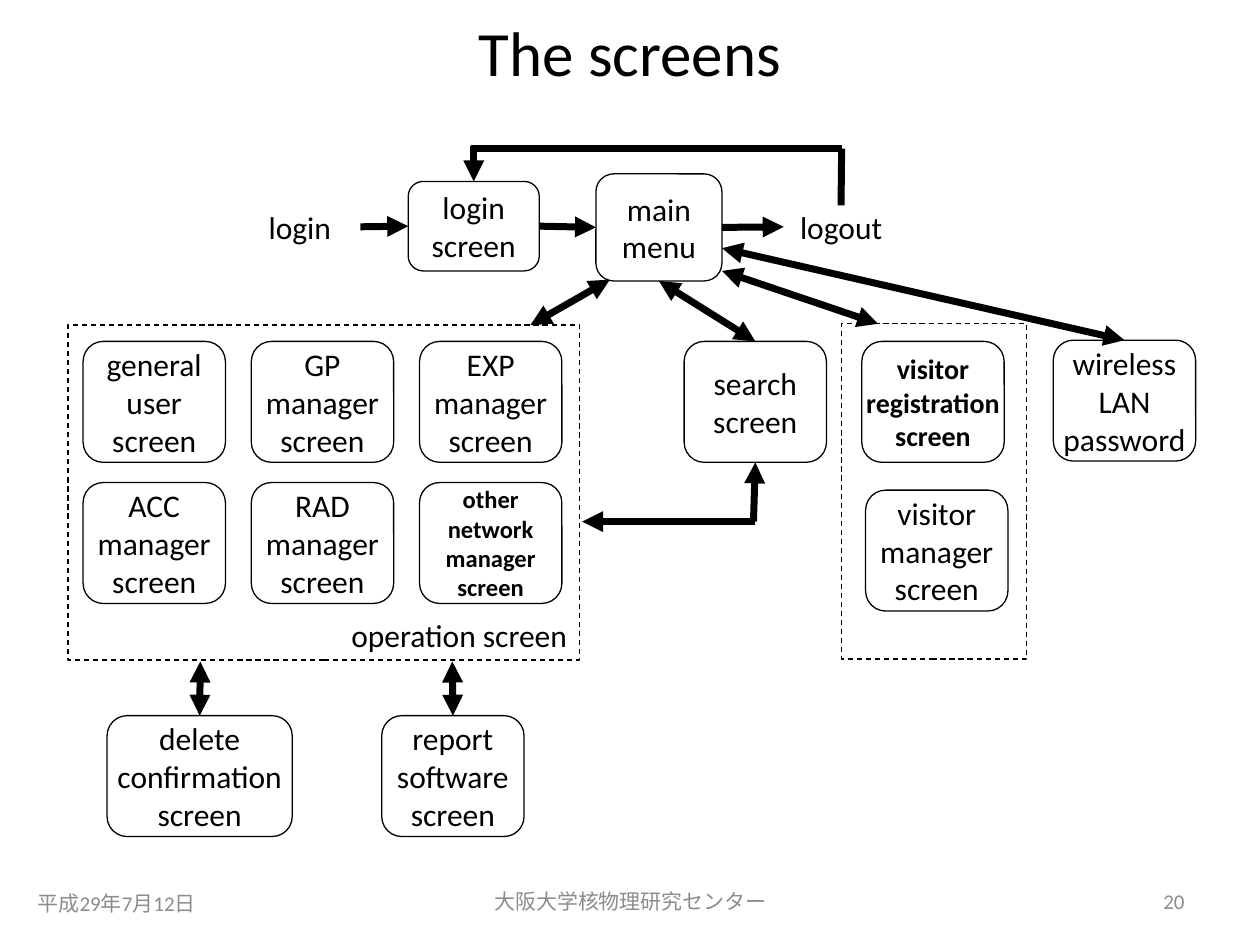
from lxml.etree import SubElement
from pptx import Presentation
from pptx.dml.color import RGBColor
from pptx.enum.dml import MSO_LINE
from pptx.enum.shapes import MSO_CONNECTOR, MSO_SHAPE
from pptx.enum.text import MSO_ANCHOR, MSO_AUTO_SIZE, PP_ALIGN
from pptx.oxml.ns import qn
from pptx.util import Inches, Pt

BLACK = RGBColor(0x00, 0x00, 0x00)
WHITE = RGBColor(0xFF, 0xFF, 0xFF)
GRAY = RGBColor(0x8C, 0x8C, 0x8C)
FONT = "Calibri"
COLUMNS = 100
UNIT = Inches(10) // COLUMNS
TOP, LEFT, BOTTOM, RIGHT = range(4)
SCREEN_WIDTH, SCREEN_HEIGHT = 11.3, 9.6
FIRST_ROW, SECOND_ROW = 27.1, 38.3
BOTTOM_ROW = 56.8
MANAGER_LEFT, MANAGER_STEP = 6.6, 13.35


def grid(*cells):
    """Turn grid columns and rows into slide lengths."""
    return [round(cell * UNIT) for cell in cells]


def write(shape, text, size=18, color=BLACK, bold=False,
          align=PP_ALIGN.CENTER, anchor=MSO_ANCHOR.MIDDLE, wrap=False):
    """Fill a shape with evenly formatted paragraphs."""
    frame = shape.text_frame
    frame.text = text
    frame.word_wrap = wrap
    frame.auto_size = MSO_AUTO_SIZE.NONE
    frame.vertical_anchor = anchor
    for para in frame.paragraphs:
        para.alignment = align
        para.font.name = FONT
        para.font.size = Pt(size)
        para.font.bold = bold
        para.font.color.rgb = color


def add_label(page, text, left, top, width, height, **style):
    """Add plain text without an outline."""
    label = page.shapes.add_textbox(*grid(left, top, width, height))
    write(label, text, **style)
    return label


def add_outline(page, kind, left, top, width, height):
    """Add an unfilled shape with a thin black line."""
    outline = page.shapes.add_shape(kind, *grid(left, top, width, height))
    outline.shadow.inherit = False
    outline.fill.background()
    outline.line.color.rgb = BLACK
    outline.line.width = Pt(0.75)
    return outline


def add_screen(page, text, left, top, width=SCREEN_WIDTH, height=SCREEN_HEIGHT, **style):
    """Add a rounded box that stands for one screen."""
    screen = add_outline(page, MSO_SHAPE.ROUNDED_RECTANGLE, left, top, width, height)
    write(screen, text, **style)
    return screen


def add_group(page, text, left, top, width, height):
    """Add a dashed frame with its caption at the lower right."""
    group = add_outline(page, MSO_SHAPE.RECTANGLE, left, top, width, height)
    group.line.dash_style = MSO_LINE.DASH
    if text:
        write(group, text, align=PP_ALIGN.RIGHT, anchor=MSO_ANCHOR.BOTTOM)


def add_arrow(page, start, end, heads=("tailEnd",)):
    """Draw a thick line between points or (shape, side) pairs."""
    ends = [grid(0, 0) if hasattr(spot[0], "shape_id") else grid(*spot)
            for spot in (start, end)]
    arrow = page.shapes.add_connector(MSO_CONNECTOR.STRAIGHT, *ends[0], *ends[1])
    for spot, join in ((start, arrow.begin_connect), (end, arrow.end_connect)):
        if hasattr(spot[0], "shape_id"):
            join(*spot)
    arrow.line.color.rgb = BLACK
    arrow.line.width = Pt(4)
    line = arrow.line._get_or_add_ln()
    for head in heads:
        SubElement(line, qn(f"a:{head}"), type="triangle")
    SubElement(arrow._element.spPr, qn("a:effectLst"))


def add_title(page, text):
    """Place and format the title placeholder."""
    title = page.shapes.title
    title.left, title.top, title.width, title.height = grid(7.5, 0.6, 85, 7)
    write(title, text, size=36, wrap=True)


def add_footer(page):
    """Add the date, the institute and the page number."""
    entries = (
        ("平成29年7月12日", 2, 69.7, 23.3, PP_ALIGN.LEFT),
        ("大阪大学核物理研究センター", 34.2, 69.5, 31.7, PP_ALIGN.CENTER),
        ("20", 71.7, 69.5, 23.3, PP_ALIGN.RIGHT),
    )
    for text, left, top, width, align in entries:
        add_label(page, text, left, top, width, 4,
                  size=12, color=GRAY, align=align, wrap=True)


def add_manager_screens(page):
    """Lay out the operation screens in two rows of three."""
    names = (("general\nuser", "GP\nmanager", "EXP\nmanager"),
             ("ACC\nmanager", "RAD\nmanager", "other\nnetwork\nmanager"))
    for top, row in zip((FIRST_ROW, SECOND_ROW), names):
        for column, name in enumerate(row):
            style = {"size": 14, "bold": True} if "other" in name else {}
            add_screen(page, f"{name}\nscreen",
                       MANAGER_LEFT + column * MANAGER_STEP, top, **style)
    add_group(page, "operation screen", 5.4, 25.8, 40.6, 26.6)


def add_visitor_screens(page):
    """Add the visitor screens and their frame."""
    add_screen(page, "visitor\nregistration\nscreen", 68.4, FIRST_ROW, size=16, bold=True)
    add_screen(page, "visitor\nmanager\nscreen", 68.7, 38.9)
    add_group(page, "", 66.8, 25.7, 14.7, 26.6)


def add_flow(page):
    """Add the single screens and the arrows between all parts."""
    login = add_label(page, "login", 19, 16.3, 9.6, 3.4)
    logout = add_label(page, "logout", 62.2, 16.3, 9.1, 3.4)
    entry = add_screen(page, "login\nscreen", 32.4, 14.4, 10.4, 7.1)
    menu = add_screen(page, "main\nmenu", 47.3, 13.8, 10, 8.5)
    for box in (entry, menu):
        box.fill.solid()
        box.fill.fore_color.rgb = WHITE
    search = add_screen(page, "search\nscreen", 54.3, FIRST_ROW)
    wireless = add_screen(page, "wireless\nLAN\npassword", 83.6, 27)
    delete = add_screen(page, "delete\nconfirmation\nscreen", 8.5, BOTTOM_ROW, 14.7)
    report = add_screen(page, "report\nsoftware\nscreen", 30.3, BOTTOM_ROW)

    for start, end in ((login, entry), (entry, menu), (menu, logout)):
        add_arrow(page, (start, RIGHT), (end, LEFT))

    two_way = (
        ((48.4, 22.2), (42.1, 25.8)),
        ((menu, BOTTOM), (search, TOP)),
        ((57.3, 21.5), (69.7, 25.7)),
        ((57.3, 19.7), (wireless, TOP)),
        ((15.9, 52.5), (delete, TOP)),
        ((35.9, 52.5), (report, TOP)),
    )
    for start, end in two_way:
        add_arrow(page, start, end, ("headEnd", "tailEnd"))

    add_arrow(page, (66.8, 11.8), (logout, TOP), ())
    add_arrow(page, (66.8, 11.8), (37.4, 11.8), ())
    add_arrow(page, (37.6, 11.6), (entry, TOP))
    add_arrow(page, (search, BOTTOM), (59.8, 41.4), ("headEnd",))
    add_arrow(page, (59.9, 41.4), (46.2, 41.4))


def main():
    """Build the slide and save it."""
    deck = Presentation()
    deck.slide_width, deck.slide_height = Inches(10), Inches(7.5)
    page = deck.slides.add_slide(deck.slide_layouts[5])
    add_title(page, "The screens")
    add_manager_screens(page)
    add_visitor_screens(page)
    add_flow(page)
    add_footer(page)
    deck.save("out.pptx")


if __name__ == "__main__":
    main()
